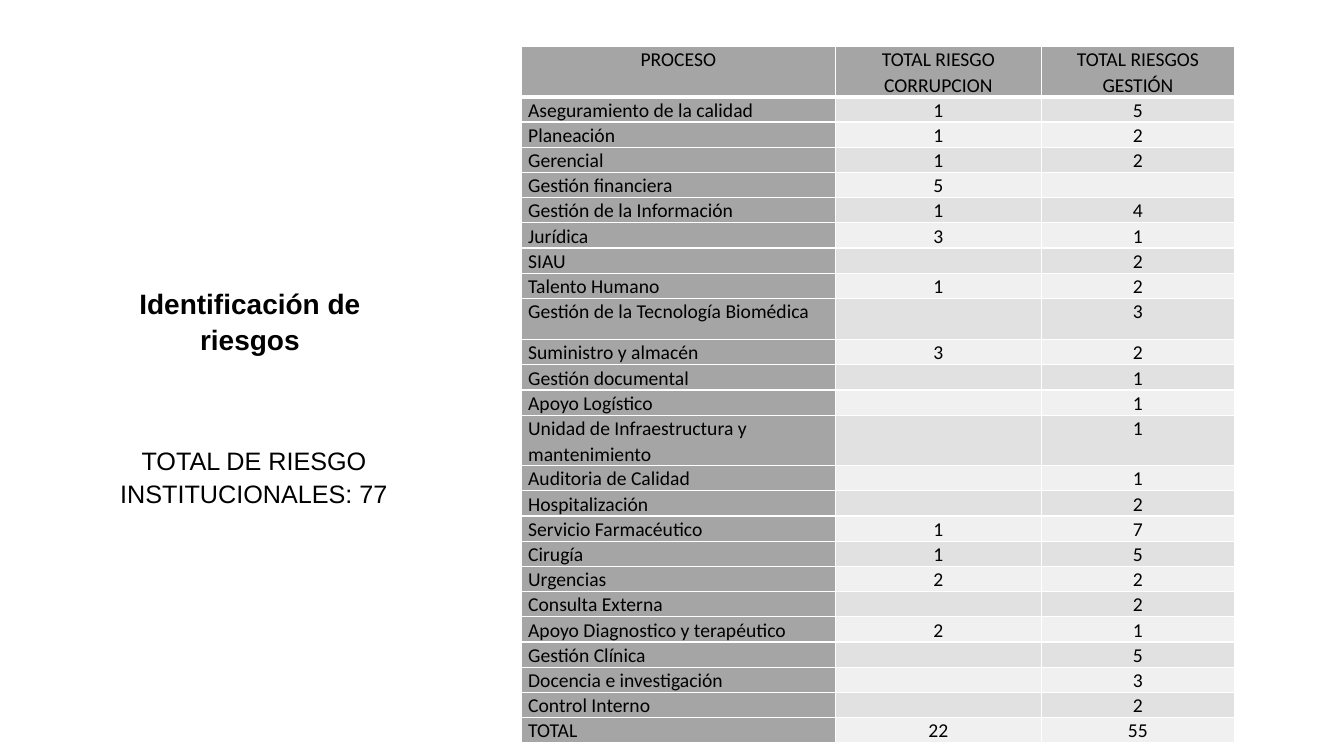
from typing import NamedTuple

from lxml import etree
from pptx import Presentation
from pptx import util as u
from pptx.dml import color
from pptx.enum import text as t
from pptx.oxml import ns

BLACK, WHITE = "000000", "FFFFFF"
GREY, DARK, LIGHT = "A5A5A5", "E1E1E1", "F0F0F0"
WIDTHS = (224.64, 146.88, 138.24)
SHORT, MID, TALL = 17.28, 29.52, 34.56


class Risk(NamedTuple):
    name: str
    fraud: str
    work: str
    high: float = SHORT


RISKS = (
    Risk("PROCESO", "TOTAL RIESGO CORRUPCION", "TOTAL RIESGOS GESTIÓN", TALL),
    Risk("Aseguramiento de la calidad", "1", "5"),
    Risk("Planeación", "1", "2"),
    Risk("Gerencial", "1", "2"),
    Risk("Gestión financiera", "5", ""),
    Risk("Gestión de la Información", "1", "4"),
    Risk("Jurídica", "3", "1"),
    Risk("SIAU", "", "2"),
    Risk("Talento Humano", "1", "2"),
    Risk("Gestión de la Tecnología Biomédica", "", "3", MID),
    Risk("Suministro y almacén", "3", "2"),
    Risk("Gestión documental", "", "1"),
    Risk("Apoyo Logístico", "", "1"),
    Risk("Unidad de Infraestructura y mantenimiento", "", "1", TALL),
    Risk("Auditoria de Calidad", "", "1"),
    Risk("Hospitalización", "", "2"),
    Risk("Servicio Farmacéutico", "1", "7"),
    Risk("Cirugía", "1", "5"),
    Risk("Urgencias", "2", "2"),
    Risk("Consulta Externa", "", "2"),
    Risk("Apoyo Diagnostico y terapéutico", "2", "1"),
    Risk("Gestión Clínica", "", "5"),
    Risk("Docencia e investigación", "", "3"),
    Risk("Control Interno", "", "2"),
    Risk("TOTAL", "22", "55"),
)


def paint(target, tint: str) -> None:
    target.rgb = color.RGBColor.from_string(tint)


def write(frame, words: str, *, size: float, face: str, bold: bool = False,
          mid: bool = True, after: float = 0) -> None:
    frame.word_wrap = True
    para = frame.paragraphs[0]
    para.alignment = t.PP_ALIGN.CENTER if mid else t.PP_ALIGN.LEFT
    para.line_spacing = 1.07
    para.space_before = u.Pt(0)
    para.space_after = u.Pt(after)
    if not words:
        para._p.get_or_add_endParaRPr().set("sz", str(int(size * 100)))
        return
    run = para.add_run()
    run.text = words
    run.font.size = u.Pt(size)
    run.font.name = face
    run.font.bold = bold
    paint(run.font.color, BLACK)


def edge(cell, side: str, wide: float) -> None:
    props = cell._tc.get_or_add_tcPr()
    line = etree.SubElement(props, ns.qn(f"a:ln{side}"), w=str(u.Pt(wide)))
    fill = etree.SubElement(line, ns.qn("a:solidFill"))
    etree.SubElement(fill, ns.qn("a:srgbClr"), val=WHITE)


def draw_cell(cell, words: str, row: int, col: int) -> None:
    cell.margin_left = cell.margin_right = u.Pt(5.04)
    cell.margin_top = cell.margin_bottom = u.Pt(0)
    for side in "LRTB":
        edge(cell, side, 3 if row == 0 and side == "B" else 1)
    cell.fill.solid()
    band = DARK if row % 2 else LIGHT
    paint(cell.fill.fore_color, GREY if row == 0 or col == 0 else band)
    write(cell.text_frame, words, size=14, face="Calibri",
          mid=row == 0 or col > 0)


def draw_grid(slide) -> None:
    frame = slide.shapes.add_table(
        len(RISKS), len(WIDTHS), u.Pt(372.24), u.Pt(33.12),
        u.Pt(sum(WIDTHS)), u.Pt(sum(risk.high for risk in RISKS)))
    grid = frame.table
    grid.first_row = grid.horz_banding = False
    for col, wide in enumerate(WIDTHS):
        grid.columns[col].width = u.Pt(wide)
    for row, risk in enumerate(RISKS):
        grid.rows[row].height = u.Pt(risk.high)
        for col, words in enumerate((risk.name, risk.fraud, risk.work)):
            draw_cell(grid.cell(row, col), words, row, col)


def main() -> None:
    deck = Presentation()
    deck.slide_width, deck.slide_height = u.Pt(960), u.Pt(540)
    slide = deck.slides.add_slide(deck.slide_layouts[5])

    title = slide.shapes.title
    title.left, title.top = u.Pt(77.76), u.Pt(199.44)
    title.width, title.height = u.Pt(201.6), u.Pt(57.6)
    title.text_frame.vertical_anchor = t.MSO_ANCHOR.TOP
    title.text_frame.auto_size = t.MSO_AUTO_SIZE.SHAPE_TO_FIT_TEXT
    write(title.text_frame, "Identificación de riesgos",
          size=20, face="Arial", bold=True, after=8)

    draw_grid(slide)

    total = slide.shapes.add_textbox(
        u.Pt(25.2), u.Pt(313.2), u.Pt(312.48), u.Pt(52.56))
    total.text_frame.auto_size = t.MSO_AUTO_SIZE.SHAPE_TO_FIT_TEXT
    write(total.text_frame, "TOTAL DE RIESGO INSTITUCIONALES: 77",
          size=18, face="Arial", after=8)

    deck.save("out.pptx")


if __name__ == "__main__":
    main()
